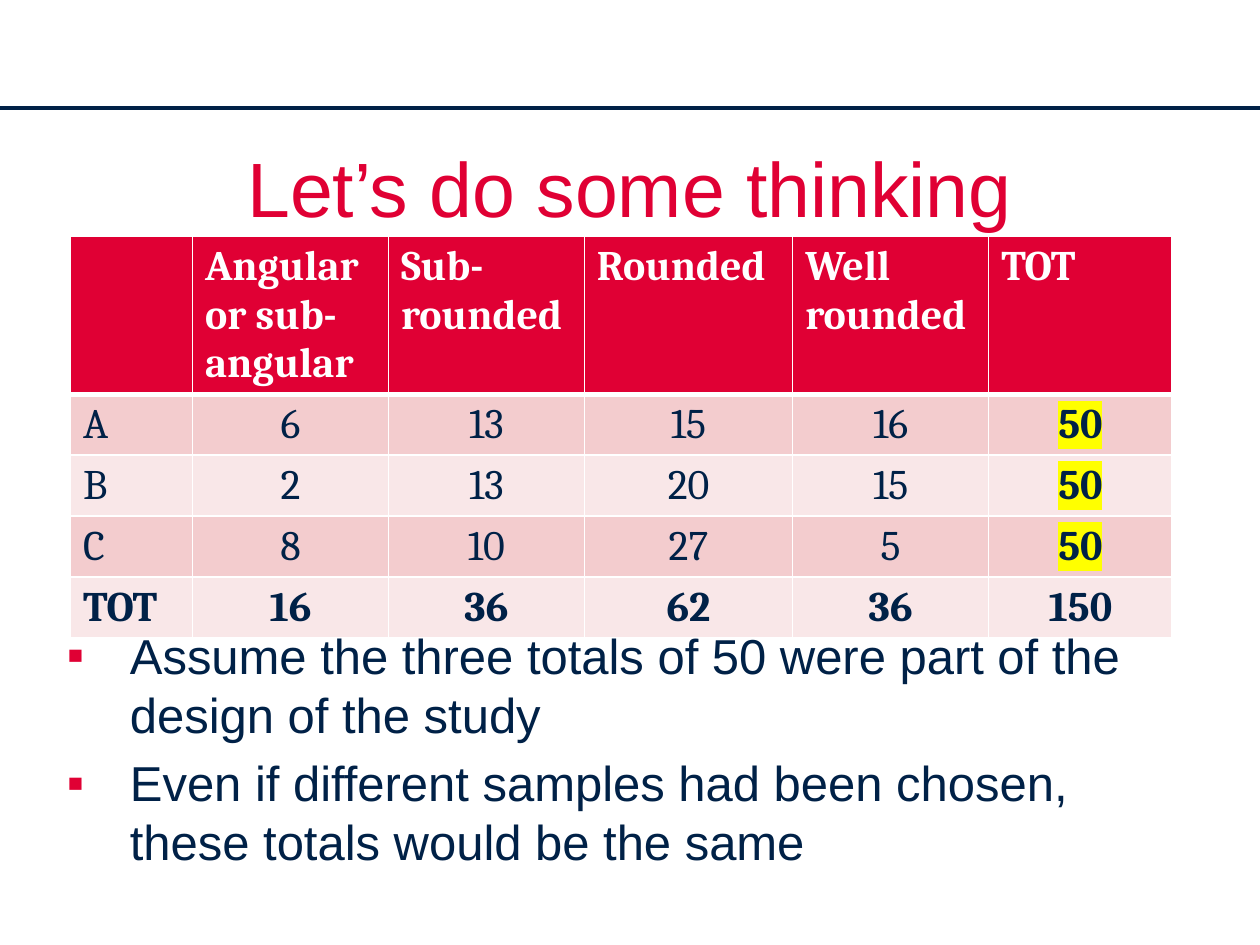
"""Build a slide with a table of pebble shapes by site and two remarks on its totals."""
from typing import NamedTuple, Optional

from lxml.etree import SubElement
from pptx import Presentation
from pptx.dml.color import RGBColor
from pptx.enum.shapes import MSO_CONNECTOR
from pptx.enum.text import MSO_ANCHOR, PP_ALIGN
from pptx.oxml.ns import qn
from pptx.util import Cm, Pt

NAVY, RED, WHITE, YELLOW = "002147", "E00034", "FFFFFF", "FFFF00"
BANDS = ("F3CCCE", "F9E7E8")
HEADER = ("", "Angular or sub- angular", "Sub-rounded", "Rounded", "Well rounded", "TOT")
COLUMN_WIDTHS = (2.46, 3.95, 3.95, 4.2, 3.95, 3.7)
ROW_HEIGHT = 1.04


class Site(NamedTuple):
    name: str
    counts: tuple[int, ...]


SITES = (
    Site("A", (6, 13, 15, 16)),
    Site("B", (2, 13, 20, 15)),
    Site("C", (8, 10, 27, 5)),
)
REMARKS = (
    "Assume the three totals of 50 were part of the design of the study",
    "Even if different samples had been chosen, these totals would be the same",
)


def color(value: str) -> RGBColor:
    return RGBColor.from_string(value)


def add_color(parent, tag: str, value: str):
    element = SubElement(parent, qn(tag))
    SubElement(element, qn("a:srgbClr"), val=value)
    return element


def write(paragraph, text: str, *, size: float, font: str, fill: str, bold: bool = False,
          align=PP_ALIGN.LEFT, highlight: Optional[str] = None) -> None:
    paragraph.alignment = align
    run = paragraph.add_run()
    run.text = text
    run.font.size, run.font.name, run.font.bold = Pt(size), font, bold
    run.font.color.rgb = color(fill)
    if highlight:
        properties = run._r.get_or_add_rPr()
        mark = add_color(properties, "a:highlight", highlight)
        properties.find(qn("a:solidFill")).addnext(mark)


def format_cell(cell, fill: str, bottom_width: float = 1, top_width: float = 1) -> None:
    properties = cell._tc.get_or_add_tcPr()
    widths = {"a:lnL": 1, "a:lnR": 1, "a:lnT": top_width, "a:lnB": bottom_width}
    for tag, width in widths.items():
        add_color(SubElement(properties, qn(tag), w=str(Pt(width))), "a:solidFill", WHITE)
    cell.fill.solid()
    cell.fill.fore_color.rgb = color(fill)


def add_rule(slide, width: int) -> None:
    rule = slide.shapes.add_connector(MSO_CONNECTOR.STRAIGHT, 0, Cm(2.18), width, Cm(2.18))
    rule.line.color.rgb = color(NAVY)
    rule.line.width = Pt(2.25)
    SubElement(rule._element.spPr, qn("a:effectLst"))


def add_title(slide, text: str) -> None:
    title = slide.shapes.title
    title.left, title.top, title.width, title.height = Cm(1.27), Cm(2.7), Cm(22.86), Cm(2.13)
    title.text_frame.vertical_anchor = MSO_ANCHOR.BOTTOM
    write(title.text_frame.paragraphs[0], text, size=44, font="Arial", fill=RED,
          align=PP_ALIGN.CENTER)


def add_counts(slide) -> None:
    totals = tuple(sum(column) for column in zip(*(site.counts for site in SITES)))
    rows = (*SITES, Site("TOT", totals))
    row_count = len(rows) + 1
    table = slide.shapes.add_table(
        row_count, len(HEADER), Cm(1.42), Cm(4.77), Cm(sum(COLUMN_WIDTHS)),
        Cm(ROW_HEIGHT * row_count)).table
    for column, width in zip(table.columns, COLUMN_WIDTHS):
        column.width = Cm(width)
    for row in table.rows:
        row.height = Cm(ROW_HEIGHT)
    for index, text in enumerate(HEADER):
        cell = table.cell(0, index)
        format_cell(cell, RED, bottom_width=3)
        if text:
            write(cell.text_frame.paragraphs[0], text, size=24, font="Cambria", fill=WHITE,
                  bold=True)
    for row_index, site in enumerate(rows, start=1):
        is_total = row_index == len(rows)
        values = (site.name, *site.counts, sum(site.counts))
        for index, value in enumerate(values):
            cell = table.cell(row_index, index)
            is_last = index == len(values) - 1
            format_cell(cell, BANDS[(row_index - 1) % 2], top_width=3 if row_index == 1 else 1)
            write(cell.text_frame.paragraphs[0], str(value), size=24, font="Cambria", fill=NAVY,
                  bold=is_total or is_last,
                  align=PP_ALIGN.CENTER if index else PP_ALIGN.LEFT,
                  highlight=YELLOW if is_last and not is_total else None)


def add_remarks(slide) -> None:
    frame = slide.shapes.add_textbox(Cm(1.1), Cm(12.48), Cm(22.86), Cm(4.29)).text_frame
    frame.word_wrap = True
    for index, remark in enumerate(REMARKS):
        paragraph = frame.add_paragraph() if index else frame.paragraphs[0]
        paragraph.space_before = Pt(5.6 if index else 0)
        properties = paragraph._p.get_or_add_pPr()
        properties.set("marL", str(Cm(1.27)))
        properties.set("indent", str(-Cm(1.27)))
        add_color(properties, "a:buClr", RED)
        SubElement(properties, qn("a:buFont"), typeface="Arial")
        SubElement(properties, qn("a:buChar"), char="▪")
        write(paragraph, remark, size=28, font="Arial", fill=NAVY)


def main() -> None:
    presentation = Presentation()
    presentation.slide_width, presentation.slide_height = Cm(25.4), Cm(19.05)
    slide = presentation.slides.add_slide(presentation.slide_layouts[5])
    add_rule(slide, presentation.slide_width)
    add_title(slide, "Let’s do some thinking")
    add_counts(slide)
    add_remarks(slide)
    presentation.save("out.pptx")


if __name__ == "__main__":
    main()
